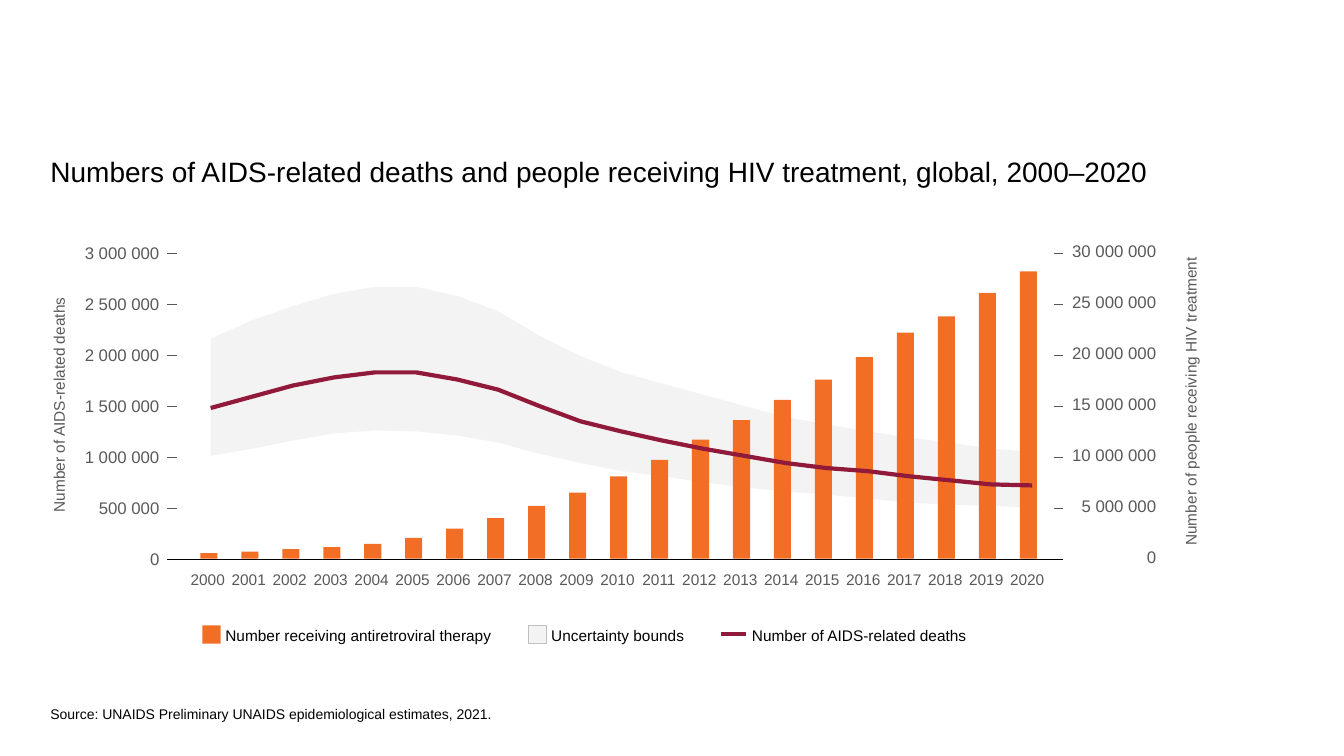
from lxml.etree import SubElement
from pptx import Presentation
from pptx.dml.color import RGBColor
from pptx.enum.shapes import MSO_CONNECTOR, MSO_SHAPE
from pptx.enum.text import MSO_AUTO_SIZE as AutoSize, PP_ALIGN as Align
from pptx.oxml.ns import qn
from pptx.util import Cm, Pt

COLORS = {"text": "000000", "axis": "595959", "treatment": "F36E25",
          "bounds": "F3F3F4", "bounds_edge": "C0C0C0", "deaths": "91193A"}

# Millions of people, 2000 to 2020
TREATMENT = [0.54, 0.7, 0.95, 1.15, 1.45, 2.05, 2.95, 4, 5.2, 6.5, 8.1,
             9.7, 11.7, 13.6, 15.6, 17.6, 19.8, 22.2, 23.8, 26.1, 28.2]
DEATHS = [1.48, 1.59, 1.7, 1.78, 1.83, 1.83, 1.76, 1.66, 1.5, 1.35, 1.25,
          1.16, 1.08, 1.01, 0.94, 0.89, 0.86, 0.81, 0.77, 0.73, 0.72]
UPPER = [2.16, 2.34, 2.48, 2.6, 2.67, 2.67, 2.58, 2.43, 2.19, 1.99, 1.83,
         1.72, 1.61, 1.5, 1.39, 1.32, 1.25, 1.19, 1.14, 1.08, 1.05]
LOWER = [1.01, 1.08, 1.16, 1.23, 1.26, 1.25, 1.21, 1.14, 1.03, 0.94, 0.86,
         0.81, 0.75, 0.7, 0.66, 0.63, 0.59, 0.55, 0.53, 0.52, 0.5]

# Plot geometry in centimetres
BASELINE, PLOT_HEIGHT = 14.08, 7.7
AXIS_LEFT, AXIS_RIGHT, TICK = 4.22, 26.8, 0.25
BAR_LEFT, BAR_WIDTH, BAR_PITCH = 5.05, 0.43, 20.65 / 20
CURVE_LEFT, CURVE_PITCH = 5.31, 20.7 / 20
DEATHS_MAX, TREATMENT_MAX, STEPS = 3, 30, 6


def height_of(value, maximum):
    return PLOT_HEIGHT * value / maximum


def curve(values):
    """Return the points of a yearly series on the deaths axis."""
    return [(CURVE_LEFT + i * CURVE_PITCH, BASELINE - height_of(v, DEATHS_MAX))
            for i, v in enumerate(values)]


class ChartSlide:
    """Draws styled elements on one slide; all positions are centimetres."""

    def __init__(self, slide, font="Arial"):
        self.shapes = slide.shapes
        self.font = font

    def color(self, name):
        return RGBColor.from_string(COLORS[name])

    def paint(self, shape, fill=None, line=None, weight=0.25):
        shape.shadow.inherit = False
        if fill:
            shape.fill.solid()
            shape.fill.fore_color.rgb = self.color(fill)
        else:
            shape.fill.background()
        if line:
            shape.line.color.rgb = self.color(line)
            shape.line.width = Pt(weight)
        else:
            shape.line.fill.background()

    def text(self, words, left, top, width, height, size=11, color="text",
             align=Align.LEFT, inset=(0, 0), spacing=14, wrap=False,
             grow=True, upward=False):
        box = self.shapes.add_textbox(Cm(left), Cm(top), Cm(width), Cm(height))
        frame = box.text_frame
        frame.word_wrap = wrap
        frame.auto_size = AutoSize.SHAPE_TO_FIT_TEXT if grow else AutoSize.NONE
        frame.margin_left = frame.margin_right = Cm(inset[0])
        frame.margin_top = frame.margin_bottom = Cm(inset[1])
        if upward:
            box.element.find(".//" + qn("a:bodyPr")).set("vert", "vert270")
        paragraph = frame.paragraphs[0]
        paragraph.alignment = align
        if spacing:
            paragraph.line_spacing = Pt(spacing)
        run = paragraph.add_run()
        run.text = words
        run.font.name = self.font
        run.font.size = Pt(size)
        run.font.color.rgb = self.color(color)

    def rect(self, left, top, width, height, fill, line=None):
        rect = self.shapes.add_shape(MSO_SHAPE.RECTANGLE, Cm(left), Cm(top),
                                     Cm(width), Cm(height))
        self.paint(rect, fill, line)

    def line(self, left, right, y, color, weight=0.25):
        line = self.shapes.add_connector(MSO_CONNECTOR.STRAIGHT, Cm(left), Cm(y),
                                         Cm(right), Cm(y))
        line.line.color.rgb = self.color(color)
        line.line.width = Pt(weight)
        SubElement(line.element.spPr, qn("a:effectLst"))

    def outline(self, points, close=False, **style):
        start, *rest = [(Cm(x), Cm(y)) for x, y in points]
        builder = self.shapes.build_freeform(*start)
        builder.add_line_segments(rest, close=close)
        self.paint(builder.convert_to_shape(), **style)

    def value_axis(self, maximum, label_right, label_rise, tick_left):
        """Draw the labels of one axis, and a tick for each above zero."""
        for step in range(STEPS + 1):
            value = maximum * 1_000_000 * step // STEPS
            words = f"{value:,}".replace(",", " ")
            spaces = words.count(" ")
            width = 0.51 + 0.24 * (len(words) - spaces) + 0.12 * spaces
            y = BASELINE - PLOT_HEIGHT * step / STEPS
            self.text(words, label_right - width, y - label_rise, width, 0.76,
                      size=12, color="axis", align=Align.RIGHT,
                      inset=(0.25, 0.13))
            if step:
                self.line(tick_left, tick_left + TICK, y, "axis")

    def axis_title(self, words, left, top, height):
        self.text(words, left, top, 0.97, height, color="axis",
                  align=Align.RIGHT, inset=(0.25, 0.13), upward=True)


def main():
    deck = Presentation()
    deck.slide_width, deck.slide_height = Cm(33.87), Cm(19.05)
    page = ChartSlide(deck.slides.add_slide(deck.slide_layouts[6]))

    page.text("Numbers of AIDS-related deaths and people receiving HIV treatment, "
              "global, 2000–2020", 1.27, 3.89, 31.75, 13.2, size=20,
              spacing=None, wrap=True, grow=False)
    page.outline(curve(UPPER) + curve(LOWER)[::-1], close=True, fill="bounds")
    page.text("Source: UNAIDS Preliminary UNAIDS epidemiological estimates, 2021.",
              1.27, 17.78, 30.73, 0.43, size=10, spacing=None, wrap=True)

    for i, treated in enumerate(TREATMENT):
        height = height_of(treated, TREATMENT_MAX)
        left = BAR_LEFT + i * BAR_PITCH
        page.rect(left, BASELINE - height, BAR_WIDTH, height, "treatment")
        page.text(str(2000 + i), left - 0.3, 14.35, 0.97, 0.46, color="axis",
                  align=Align.RIGHT, inset=(0.05, 0))

    page.value_axis(DEATHS_MAX, 4.27, 0.38, AXIS_LEFT)
    page.value_axis(TREATMENT_MAX, 29.39, 0.43, AXIS_RIGHT - TICK)
    page.axis_title("Number of AIDS-related deaths", 0.97, 7.37, 5.72)
    page.axis_title("Number of people receiving HIV treatment", 29.49, 6.35, 7.57)
    page.outline(curve(DEATHS), line="deaths", weight=3)

    for words, left, width in (
            ("Number receiving antiretroviral therapy", 5.68, 6.76),
            ("Uncertainty bounds", 13.89, 3.38),
            ("Number of AIDS-related deaths", 18.95, 5.46)):
        page.text(words, left, 15.76, width, 0.46)
    page.rect(5.1, 15.76, 0.46, 0.46, "treatment")
    page.rect(13.31, 15.76, 0.46, 0.46, "bounds", line="bounds_edge")
    page.line(18.16, 18.8, 15.98, "deaths", weight=2.5)
    page.line(AXIS_LEFT, AXIS_RIGHT, BASELINE, "text")

    deck.save("out.pptx")


if __name__ == "__main__":
    main()
